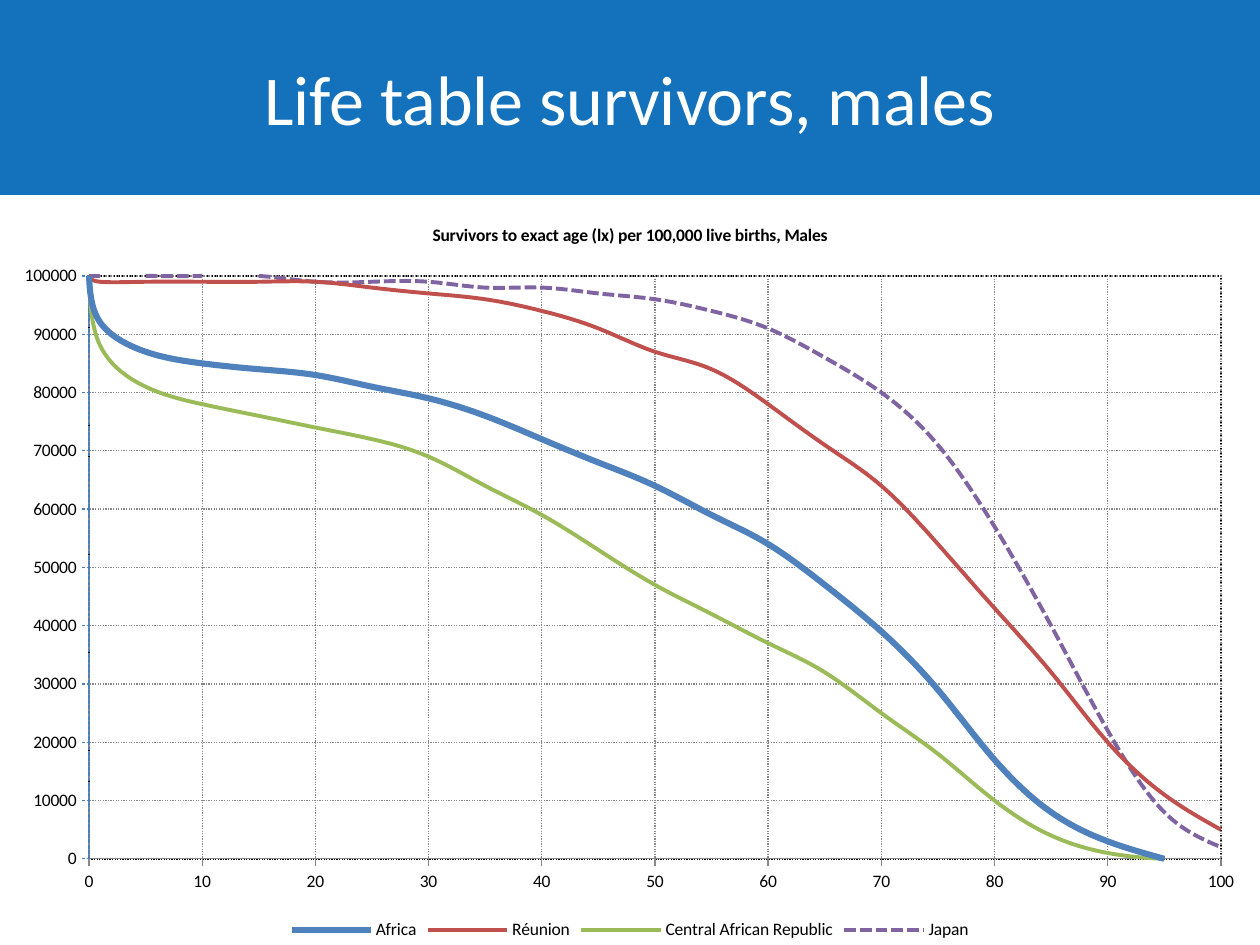
from lxml import etree
from pptx import Presentation
from pptx.chart.data import XyChartData
from pptx.dml.color import RGBColor
from pptx.enum.chart import XL_CHART_TYPE as ChartType, XL_LEGEND_POSITION as LegendPosition
from pptx.enum.chart import XL_TICK_MARK as TickMark
from pptx.enum.dml import MSO_LINE_DASH_STYLE as Dash
from pptx.enum.shapes import MSO_SHAPE as Shape
from pptx.enum.text import MSO_ANCHOR as Anchor, PP_ALIGN as Align
from pptx.oxml import parse_xml
from pptx.oxml.ns import nsdecls, qn
from pptx.util import Emu, Pt

WIDTH, HEIGHT = 1260, 945
FONT = "Calibri"
BLUE, WHITE, BLACK, GRAY, AXIS_BLUE = "1472BC", "FFFFFF", "000000", "888888", "4B7EBC"

# Survivors in thousands at each exact age; None where there is no figure
AGES = [0, 1, *range(5, 101, 5)]
SURVIVORS = [
    # name, colour, line width, dash, values
    ("Africa", "4F81BD", 3.5, None,
     [100, 92, 87, 85, 84, 83, 81, 79, 76, 72, 68, 64, 59, 54, 47, 39, 29, 17, 8, 3, 0, None]),
    ("Réunion", "C0504D", 2.25, None,
     [100, 99, 99, 99, 99, 99, 98, 97, 96, 94, 91, 87, 84, 78, 71, 64, 54, 43, 32, 20, 11, 5]),
    ("Central African Republic", "9BBB59", 2.25, None,
     [100, 88, 81, 78, 76, 74, 72, 69, 64, 59, 53, 47, 42, 37, 32, 25, 18, 10, 4, 1, 0, 0]),
    ("Japan", "8064A2", 2.25, Dash.SQUARE_DOT,
     [100, 100, 100, 100, 100, 99, 99, 99, 98, 98, 97, 96, 94, 91, 86, 80, 71, 57, 40, 22, 8, 2]),
]


def px(value):
    return Emu(round(value * 914400 / 126))


def color(value):
    return RGBColor.from_string(value)


class Deck:
    def __init__(self):
        self.presentation = Presentation()
        self.presentation.slide_width = px(WIDTH)
        self.presentation.slide_height = px(HEIGHT)
        self.slide = self.presentation.slides.add_slide(self.presentation.slide_layouts[6])

    def banner(self, text, left, top, width, height):
        shape = self.slide.shapes.add_shape(
            Shape.RECTANGLE, px(left), px(top), px(width), px(height))
        shape.shadow.inherit = False
        shape.fill.solid()
        shape.fill.fore_color.rgb = color(BLUE)
        shape.line.fill.background()
        frame = shape.text_frame
        frame.word_wrap = True
        frame.vertical_anchor = Anchor.MIDDLE
        paragraph = frame.paragraphs[0]
        paragraph.alignment = Align.CENTER
        self.run(paragraph, text, 40, WHITE)

    def run(self, paragraph, text, size, ink, bold=False):
        run = paragraph.add_run()
        run.text = text
        self.font(run.font, size, ink, bold)

    def font(self, font, size, ink, bold=False):
        font.name, font.size, font.bold = FONT, Pt(size), bold
        font.color.rgb = color(ink)

    def line(self, line, ink, width, dash=None):
        line.color.rgb = color(ink)
        line.width = Pt(width)
        if dash:
            line.dash_style = dash

    def axis(self, axis, maximum, line_color, dash=None):
        axis.minimum_scale, axis.maximum_scale = 0, maximum
        axis.major_unit = maximum / 10
        axis.major_tick_mark, axis.minor_tick_mark = TickMark.OUTSIDE, TickMark.NONE
        axis.has_major_gridlines = True
        self.line(axis.major_gridlines.format.line, GRAY, 0.75, Dash.ROUND_DOT)
        self.line(axis.format.line, line_color, 0.75, dash)
        axis.tick_labels.number_format = "0"
        axis.tick_labels.number_format_is_linked = False
        self.font(axis.tick_labels.font, 10, BLACK)

    def plot_area(self, chart, left, top, width, height):
        """Fix the inner plot area, in fractions of the chart, and frame it."""
        area = chart.element.chart.plotArea
        for layout in area.findall(qn("c:layout")):
            area.remove(layout)
        layout = parse_xml(f"<c:layout {nsdecls('c')}/>")
        manual = etree.SubElement(layout, qn("c:manualLayout"))
        settings = [("layoutTarget", "inner"), ("xMode", "edge"), ("yMode", "edge"),
                    ("x", left), ("y", top), ("w", width), ("h", height)]
        for name, value in settings:
            etree.SubElement(manual, qn(f"c:{name}")).set("val", str(value))
        area.insert(0, layout)
        area.append(parse_xml(
            f'<c:spPr {nsdecls("c", "a")}><a:noFill/><a:ln w="9525"><a:solidFill>'
            f'<a:srgbClr val="{BLACK}"/></a:solidFill><a:prstDash val="sysDot"/></a:ln></c:spPr>'))

    def smooth_curves(self, chart):
        """Smooth every curve and leave missing figures as gaps."""
        for smooth in chart.element.iter(qn("c:smooth")):
            smooth.set("val", "1")
        for point in list(chart.element.iter(qn("c:pt"))):
            if point.findtext(qn("c:v")) == "None":
                point.getparent().remove(point)

    def scatter(self, title, left, top, width, height):
        data = XyChartData()
        for name, *_, values in SURVIVORS:
            series = data.add_series(name)
            for age, thousands in zip(AGES, values):
                series.add_data_point(age, None if thousands is None else thousands * 1000)
        chart = self.slide.shapes.add_chart(
            ChartType.XY_SCATTER_SMOOTH_NO_MARKERS,
            px(left), px(top), px(width), px(height), data).chart
        self.font(chart.font, 10, BLACK)

        # Title and legend
        chart.has_title = True
        self.run(chart.chart_title.text_frame.paragraphs[0], title, 10, BLACK, bold=True)
        chart.chart_title.include_in_layout = False
        chart.has_legend = True
        chart.legend.position = LegendPosition.BOTTOM
        chart.legend.include_in_layout = False
        self.font(chart.legend.font, 10, BLACK)

        # Axes and curves
        self.axis(chart.category_axis, 100, GRAY)
        self.axis(chart.value_axis, 100000, AXIS_BLUE, Dash.SQUARE_DOT)
        plot = chart.plots[0]
        plot.vary_by_categories = False
        for series, (_, ink, line_width, dash, _) in zip(plot.series, SURVIVORS):
            self.line(series.format.line, ink, line_width, dash)
        self.smooth_curves(chart)
        self.plot_area(chart, 89 / width, 77 / height, 1132 / width, 583 / height)


def main():
    deck = Deck()
    # Title banner
    deck.banner("Life table survivors, males", 0, 0, WIDTH, 195)
    # Survival curves
    deck.scatter("Survivors to exact age (lx) per 100,000 live births, Males",
                 0, 199, WIDTH, HEIGHT - 199)
    deck.presentation.save("out.pptx")


if __name__ == "__main__":
    main()
